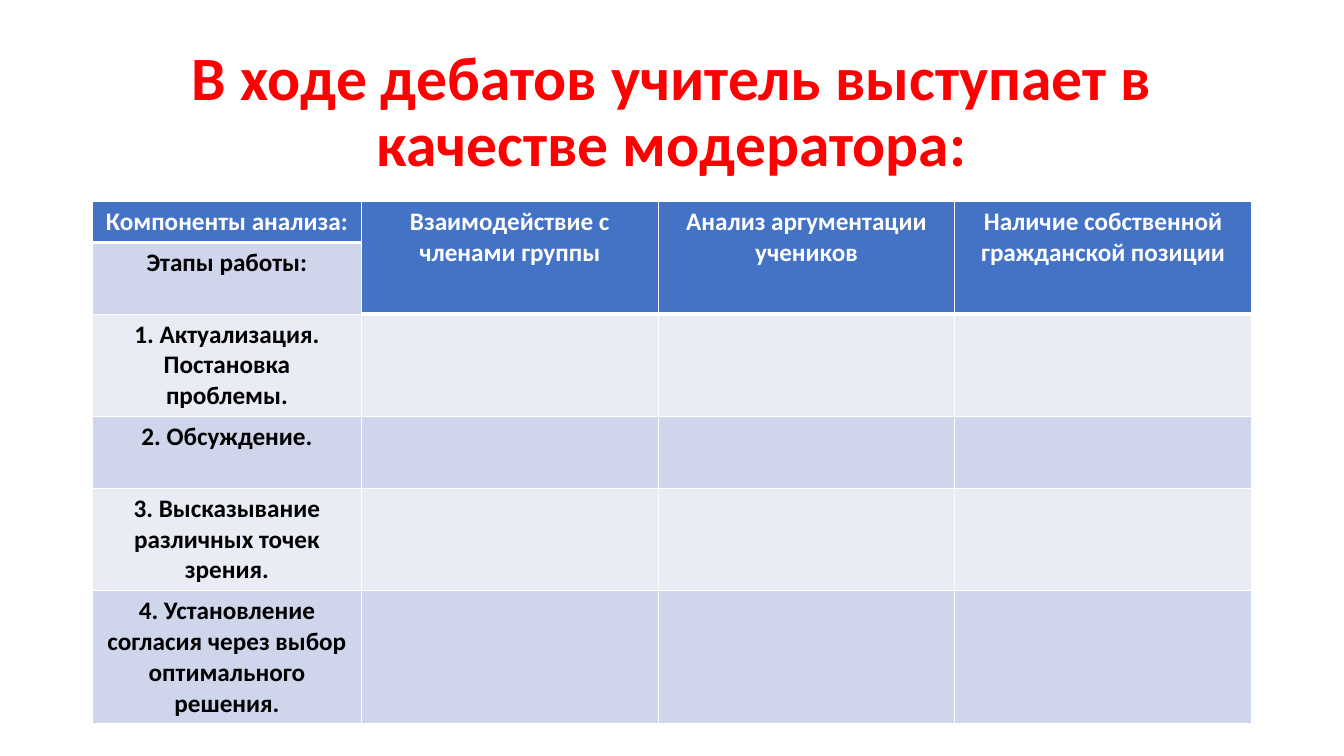
from lxml.etree import SubElement as Sub
from pptx import Presentation as Deck
from pptx.dml.color import RGBColor as Color
from pptx.enum.text import MSO_ANCHOR as Anchor, MSO_AUTO_SIZE as Fit, PP_ALIGN as Align
from pptx.oxml.ns import qn
from pptx.util import Pt

RED = Color(0xFF, 0x00, 0x00)
BLUE = Color(0x44, 0x72, 0xC4)
DARK = Color(0xCF, 0xD5, 0xEA)
LIGHT = Color(0xE9, 0xEB, 0xF5)
WHITE = Color(0xFF, 0xFF, 0xFF)
BLACK = Color(0x00, 0x00, 0x00)
FONT = "Calibri"

TITLE = "В ходе дебатов учитель выступает в качестве модератора:"
HEADS = [
    "Компоненты анализа:",
    "Взаимодействие с членами группы",
    "Анализ аргументации учеников",
    "Наличие собственной гражданской позиции",
]
# Each stage with the number of lines its row holds
STAGES = [
    ("Этапы работы:", 2),
    ("1. Актуализация. Постановка проблемы.", 3),
    ("2. Обсуждение.", 2),
    ("3. Высказывание различных точек зрения.", 3),
    ("4. Установление согласия через выбор оптимального решения.", 4),
]
LINE, PAD = 22, 7.2


def style(para, size, color):
    para.alignment = Align.CENTER
    font = para.font
    font.name, font.size, font.bold = FONT, Pt(size), True
    font.color.rgb = color


def add_title(slide, left, top, width, height):
    title = slide.shapes.title
    title.left, title.top = Pt(left), Pt(top)
    title.width, title.height = Pt(width), Pt(height)
    frame = title.text_frame
    frame.text = TITLE
    frame.auto_size = Fit.NONE
    frame.vertical_anchor = Anchor.MIDDLE
    para = frame.paragraphs[0]
    para.line_spacing = 0.9
    style(para, 44, RED)


def edge(cell, sides):
    """Draw white cell borders; sides gives widths for L, R, T, B."""
    props = cell._tc.get_or_add_tcPr()
    for side, width in zip("LRTB", sides):
        line = Sub(props, qn(f"a:ln{side}"), w=str(Pt(width)))
        fill = Sub(line, qn("a:solidFill"))
        Sub(fill, qn("a:srgbClr"), val=str(WHITE))


def add_grid(slide, left, top, width):
    lines = [1] + [count for _, count in STAGES]
    highs = [count * LINE + PAD for count in lines]
    first = 192.25
    rest = (width - first) / (len(HEADS) - 1)
    grid = slide.shapes.add_table(
        len(highs), len(HEADS), Pt(left), Pt(top), Pt(width), Pt(sum(highs))
    ).table
    for row, high in zip(grid.rows, highs):
        row.height = Pt(high)
    for col, column in enumerate(grid.columns):
        column.width = Pt(rest if col else first)

    # Fills and borders: the head ends one row lower beyond the first column
    for row in range(len(highs)):
        for col in range(len(HEADS)):
            cell = grid.cell(row, col)
            last = 1 if col else 0
            edge(cell, (1, 1, 3 if row == last + 1 else 1, 3 if row == last else 1))
            cell.fill.solid()
            band = DARK if row % 2 else LIGHT
            cell.fill.fore_color.rgb = BLUE if row <= last else band

    # Head texts
    for col, text in enumerate(HEADS):
        cell = grid.cell(0, col)
        if col:
            cell.merge(grid.cell(1, col))
        cell.text = text
        style(cell.text_frame.paragraphs[0], 18, WHITE)

    # Stage texts
    for row, (text, _) in enumerate(STAGES, 1):
        cell = grid.cell(row, 0)
        cell.text = text
        style(cell.text_frame.paragraphs[0], 18, BLACK)


def main():
    deck = Deck()
    deck.slide_width, deck.slide_height = Pt(960), Pt(540)
    slide = deck.slides.add_slide(deck.slide_layouts[5])
    add_title(slide, 66, 28.75, 828, 104.4)
    add_grid(slide, 66, 144, 828)
    deck.save("out.pptx")


if __name__ == "__main__":
    main()
